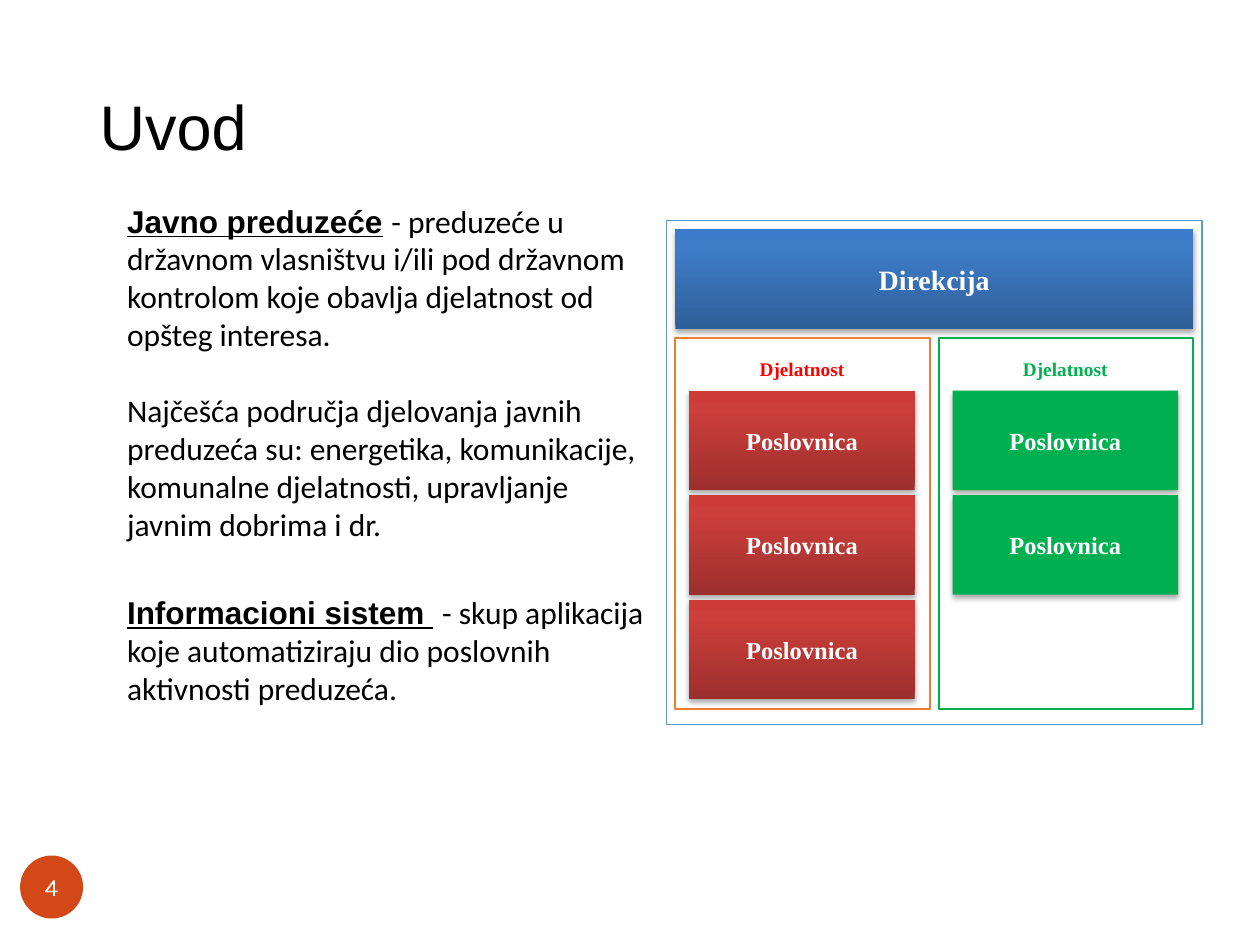
from collections import namedtuple

from lxml import etree
from pptx import Presentation
from pptx.dml.color import RGBColor
from pptx.enum.shapes import MSO_SHAPE
from pptx.enum.text import MSO_ANCHOR, MSO_AUTO_SIZE, PP_ALIGN
from pptx.oxml import parse_xml
from pptx.oxml.ns import nsdecls, qn
from pptx.util import Inches, Pt

RECTANGLE, OVAL = MSO_SHAPE.RECTANGLE, MSO_SHAPE.OVAL
LEFT, CENTER = PP_ALIGN.LEFT, PP_ALIGN.CENTER
TOP, MIDDLE = MSO_ANCHOR.TOP, MSO_ANCHOR.MIDDLE
GROW = MSO_AUTO_SIZE.SHAPE_TO_FIT_TEXT

COLORS = {
    "black": "000000", "white": "FFFFFF", "badge": "D34817",
    "frame": "5B9BD5", "orange": "ED7D31", "green": "00B050", "red": "FF0000",
}
BLUE_GRADIENT = ((0, "2F5F99"), (80, "3D7CC7"), (100, "3A7CCB"))
RED_GRADIENT = ((0, "9C2F2D"), (80, "CB3E3A"), (100, "CE3B37"))
SERIF = "Times New Roman"

# Lengths in inches
Box = namedtuple("Box", "left top width height")
SLIDE = Box(0, 0, 10, 7.5)
GAP = 0.07
OFFICE_HEIGHT, OFFICE_PITCH = 0.79, 0.83

# Term, definition, space before in points
DEFINITIONS = (
    ("Javno preduzeće",
     "- preduzeće u državnom vlasništvu i/ili pod državnom kontrolom "
     "koje obavlja djelatnost od opšteg interesa.", 0),
    (None,
     "Najčešća područja djelovanja javnih preduzeća su: energetika, "
     "komunikacije, komunalne djelatnosti, upravljanje javnim dobrima i dr.", 22),
    ("Informacioni sistem ",
     "- skup aplikacija koje automatiziraju dio poslovnih aktivnosti preduzeća.", 29),
)


def rgb(name):
    return RGBColor.from_string(COLORS[name])


def emu(box):
    return [Inches(length) for length in box]


def format_font(font, name, size, color, bold=False):
    font.name, font.size, font.bold = name, Pt(size), bold
    font.color.rgb = rgb(color)


def fill_gradient(shape, stops):
    """Fill with stops that run from the bottom edge to the top edge."""
    shape.fill.gradient()
    gradient = shape._element.spPr.find(qn("a:gradFill"))
    stop_list = gradient.find(qn("a:gsLst"))
    for stop in list(stop_list):
        stop_list.remove(stop)
    for position, color in stops:
        stop = etree.SubElement(stop_list, qn("a:gs"), pos=str(position * 1000))
        etree.SubElement(stop, qn("a:srgbClr"), val=color)
    gradient.find(qn("a:lin")).set("ang", str(270 * 60000))


def add_shadow(shape):
    effects = shape._element.spPr.find(qn("a:effectLst"))
    effects.append(parse_xml(
        f'<a:outerShdw {nsdecls("a")} blurRad="40000" dist="23000" dir="5400000" '
        'rotWithShape="0"><a:srgbClr val="000000"><a:alpha val="35000"/>'
        '</a:srgbClr></a:outerShdw>'))


def add_panel(shapes, box, fill="white", line=None, kind=RECTANGLE):
    """Add a shape; fill is a colour name or a tuple of gradient stops."""
    shape = shapes.add_shape(kind, *emu(box))
    shape.shadow.inherit = False
    if isinstance(fill, str):
        shape.fill.solid()
        shape.fill.fore_color.rgb = rgb(fill)
    else:
        fill_gradient(shape, fill)
    if line:
        shape.line.color.rgb = rgb(line)
        shape.line.width = Pt(1)
    else:
        shape.line.fill.background()
    return shape


def add_label(shape, text, name, size, color, bold=True, anchor=MIDDLE):
    frame = shape.text_frame
    frame.vertical_anchor = anchor
    paragraph = frame.paragraphs[0]
    paragraph.text = text
    paragraph.alignment = CENTER
    format_font(paragraph.font, name, size, color, bold)
    return paragraph


def add_block(shapes, box, text, size, fill):
    block = add_panel(shapes, box, fill)
    add_shadow(block)
    add_label(block, text, SERIF, size, "white")


def add_division(shapes, box, line, heading_color, office_fill, offices):
    """Add one outlined column: a heading over a stack of offices."""
    add_panel(shapes, box, line=line)
    left, width = box.left + 0.11, box.width - 0.23
    heading = add_panel(shapes, Box(left, box.top + 0.08, width, 0.26))
    paragraph = add_label(heading, "Djelatnost", SERIF, 11, heading_color, anchor=TOP)
    paragraph.line_spacing = 1.15
    paragraph.space_after = Pt(10)
    for row in range(offices):
        top = box.top + 0.42 + row * OFFICE_PITCH
        add_block(shapes, Box(left, top, width, OFFICE_HEIGHT),
                  "Poslovnica", 14, office_fill)


def add_organisation(slide, box):
    shapes = slide.shapes.add_group_shape().shapes
    add_panel(shapes, box, line="frame")
    left, top = box.left + GAP, box.top + GAP
    width = box.width - 2 * GAP
    add_block(shapes, Box(left, top, width, OFFICE_HEIGHT), "Direkcija", 16, BLUE_GRADIENT)
    column_top = top + OFFICE_HEIGHT + GAP
    column_width = (width - GAP) / 2
    divisions = (("orange", "red", RED_GRADIENT, 3), ("green", "green", "green", 2))
    for column, division in enumerate(divisions):
        column_left = left + column * (column_width + GAP)
        add_division(shapes, Box(column_left, column_top, column_width, 2.95), *division)


def add_title(slide, box):
    title = slide.shapes.title
    title.left, title.top, title.width, title.height = emu(box)
    title.text_frame.vertical_anchor = MIDDLE
    paragraph = title.text_frame.paragraphs[0]
    paragraph.text = "Uvod"
    paragraph.alignment = LEFT
    paragraph.line_spacing = 0.9
    format_font(paragraph.font, "Arial", 36, "black")


def add_definitions(slide, box):
    frame = slide.shapes.add_textbox(*emu(box)).text_frame
    frame.word_wrap = True
    frame.auto_size = GROW
    for index, (term, definition, space) in enumerate(DEFINITIONS):
        paragraph = frame.add_paragraph() if index else frame.paragraphs[0]
        paragraph.space_before = Pt(space)
        pieces = [(definition, "Calibri", False)]
        if term:
            pieces = [(term, "Arial", True), (" ", "Arial", False)] + pieces
        for text, name, is_term in pieces:
            run = paragraph.add_run()
            run.text = text
            format_font(run.font, name, 18, "black", is_term)
            run.font.underline = is_term


def add_page_number(slide, box):
    badge = add_panel(slide.shapes, box, "badge", kind=OVAL)
    frame = badge.text_frame
    frame.word_wrap = False
    frame.margin_left = frame.margin_right = frame.margin_top = frame.margin_bottom = 0
    add_label(badge, "4", "Karla", 14, "white", bold=False)


def main():
    presentation = Presentation()
    presentation.slide_width = Inches(SLIDE.width)
    presentation.slide_height = Inches(SLIDE.height)
    slide = presentation.slides.add_slide(presentation.slide_layouts[5])
    add_title(slide, Box(0.69, 0.67, 8.62, 0.72))
    add_definitions(slide, Box(0.91, 1.55, 4.31, 4.75))
    add_page_number(slide, Box(0.16, 6.79, 0.5, 0.5))
    add_organisation(slide, Box(5.29, 1.75, 4.25, 4))
    presentation.save("out.pptx")


if __name__ == "__main__":
    main()
